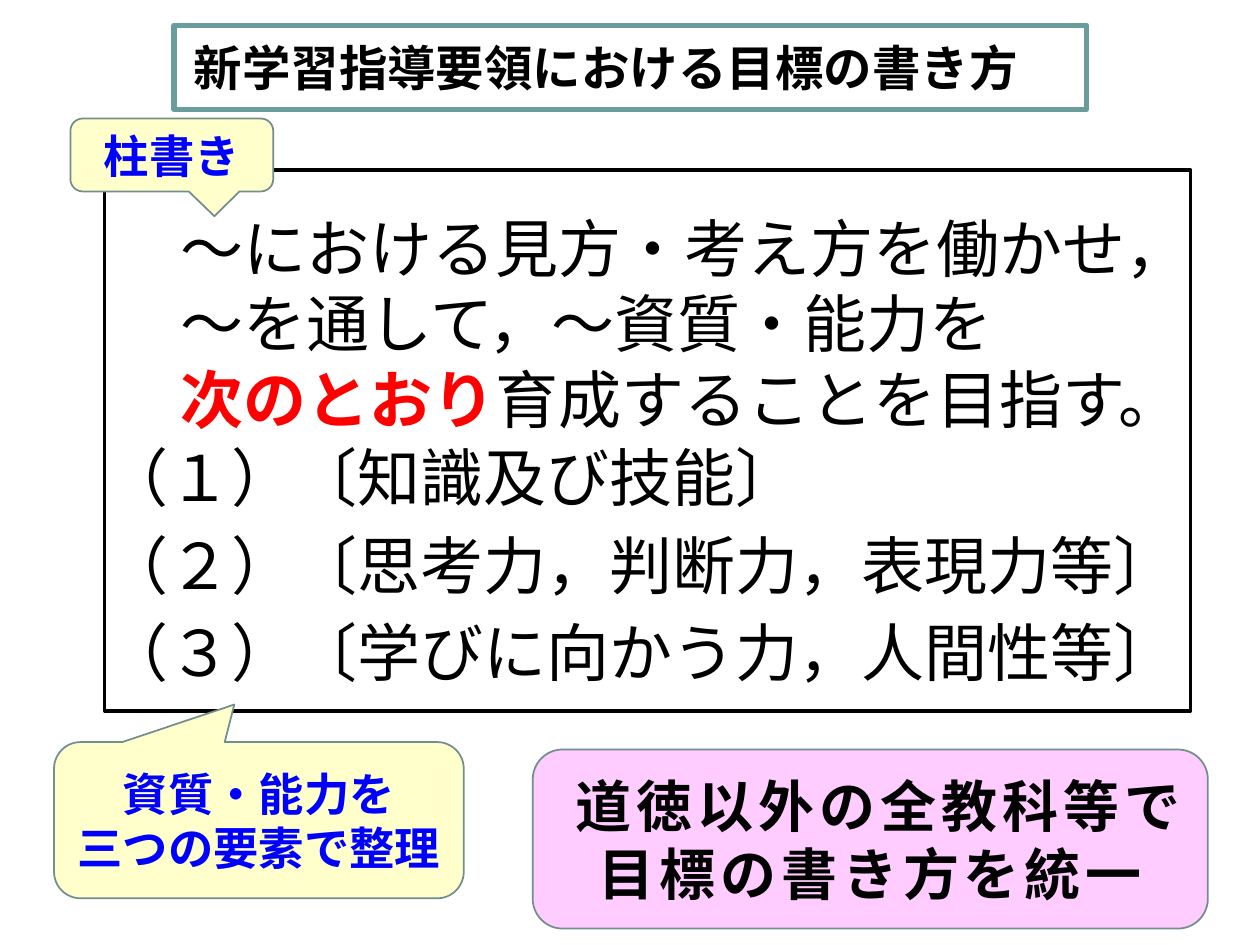
"""Build the slide on how goals are written in the new course of study."""
from pptx import Presentation, util as u
from pptx.dml.color import RGBColor
from pptx.enum import shapes, text
from pptx.oxml.ns import qn
from lxml import etree

theme = {
    "black": "000000", "red": "FF0000", "blue": "0000FF", "white": "FFFFFF",
    "cream": "FFFFCC", "pink": "FFCCFF", "teal": "689D9B", "gray": "748D8D",
    "head": 27.7, "goal": 36, "note": 25.9, "sum": 32,
    "sans": "Noto Sans CJK JP", "lato": "Lato",
}
kind = shapes.MSO_SHAPE
mid = text.MSO_ANCHOR.MIDDLE
top = text.MSO_ANCHOR.TOP
mark = text.PP_ALIGN.CENTER
left = text.PP_ALIGN.LEFT


def tint(name):
    return RGBColor.from_string(theme[name])


def write(shape, lines, look, frame, para):
    box = shape.text_frame
    for key, val in {"word_wrap": True, **frame}.items():
        setattr(box, key, val)
    for i, line in enumerate(lines):
        par = box.paragraphs[0] if i == 0 else box.add_paragraph()
        for key, val in para.items():
            setattr(par, key, val)
        for words, more in line:
            run = par.add_run()
            run.text = words
            form = {**look, **more}
            font = {"size": u.Pt(theme[form["size"]]), "name": theme[form["face"]],
                    "bold": form["bold"]}
            for key, val in font.items():
                setattr(run.font, key, val)
            run.font.color.rgb = tint(form["tint"])
            props = run.font._element
            etree.SubElement(props, qn("a:ea")).set("typeface", font["name"])
            if "gap" in form:
                props.set("spc", form["gap"])


deck = Presentation()
deck.slide_width, deck.slide_height = u.Cm(25.4), u.Cm(19.05)
slide = deck.slides.add_slide(deck.slide_layouts[6])

head = {"size": "head", "face": "sans", "bold": True, "tint": "black"}
goal = {"size": "goal", "face": "sans", "bold": False, "tint": "black"}
note = {"size": "note", "face": "lato", "bold": True, "tint": "blue"}
total = {"size": "sum", "face": "lato", "bold": True, "tint": "black", "gap": "280"}
center = {"vertical_anchor": mid}
wide = {"vertical_anchor": top, "margin_right": 0}

parts = [
    (kind.RECTANGLE, (3.51, 0.51, 18.39, 1.7), (), "white", "teal", 3,
     [[("新学習指導要領における目標の書き方　", {})]], head, center, mark),
    (kind.RECTANGLE, (2.11, 3.43, 21.89, 10.9), (), "white", "black", 2,
     [[("　～における見方・考え方を働かせ，", {})],
      [("　～を通して，～資質・能力を", {})],
      [("　", {}), ("次のとおり", {"tint": "red", "bold": True}),
       ("育成することを目指す。", {})]],
     goal, {**wide, "margin_top": u.Cm(0.79)}, left),
    (kind.ROUNDED_RECTANGULAR_CALLOUT, (1.09, 14.96, 8.26, 3.15),
     (-0.06, -0.74, 0.17), "cream", "gray", 1,
     [[("資質・能力を", {})], [("三つの要素で整理", {})]], note, center, mark),
    (kind.ROUNDED_RECTANGLE, (10.74, 15.11, 13.61, 3.61), (), "pink", "gray", 1,
     [[(" ", {"size": "note"}), ("道徳以外の全教科等で", {})],
      [("目標の書き方を統一", {})]], total, center, mark),
    (kind.ROUNDED_RECTANGULAR_CALLOUT, (1.42, 2.39, 4.09, 1.47),
     (0.21, 0.84, 0.17), "cream", "gray", 1,
     [[("柱書き", {})]], note, center, mark),
]
for form, place, bends, fill, edge, width, lines, look, frame, align in parts:
    shape = slide.shapes.add_shape(form, *map(u.Cm, place))
    shape.shadow.inherit = False
    shape.fill.solid()
    shape.fill.fore_color.rgb = tint(fill)
    shape.line.color.rgb = tint(edge)
    shape.line.width = u.Pt(width)
    for i, bend in enumerate(bends):
        shape.adjustments[i] = bend
    write(shape, lines, look, frame, {"alignment": align})

names = ["（１）〔知識及び技能〕", "（２）〔思考力，判断力，表現力等〕",
         "（３）〔学びに向かう力，人間性等〕"]
items = slide.shapes.add_textbox(*map(u.Cm, (1.88, 8.89, 22.1, 5.84)))
write(items, [[(name, {})] for name in names], goal, wide,
      {"line_spacing": 0.9, "space_before": u.Pt(11.1)})

deck.save("out.pptx")
